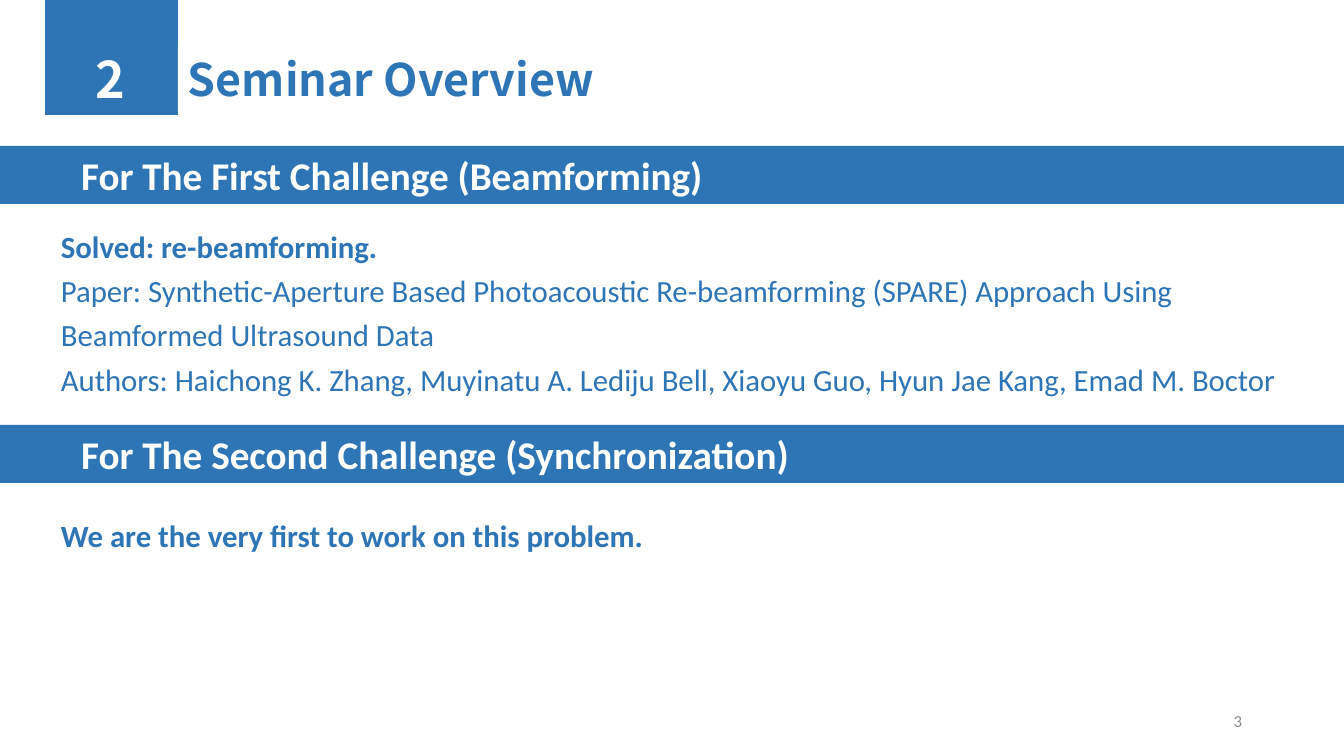
"""Build the Seminar Overview slide."""
from pptx import Presentation
from pptx.dml.color import RGBColor
from pptx.enum.shapes import MSO_SHAPE
from pptx.enum.text import MSO_ANCHOR, PP_ALIGN
from pptx.util import Pt

PX = 914400 / 100.8
WIDTH, HEIGHT = 1344, 756
COLORS = {"blue": "2E75B6", "white": "FFFFFF", "gray": "8C8C8C"}
HEADING_FONT, BODY_FONT = "Noto Sans CJK SC", "Calibri"

SECTION_NUMBER = "2"
TITLE = "Seminar Overview"
PAGE_NUMBER = "3"
SECTIONS = [
    {"bar_top": 146, "heading": "For The First Challenge (Beamforming)",
     "body_top": 215, "body_height": 189,
     "body": [("Solved: re-beamforming.", True),
              ("Paper: Synthetic-Aperture Based Photoacoustic Re-beamforming (SPARE) "
               "Approach Using Beamformed Ultrasound Data", False),
              ("Authors: Haichong K. Zhang, Muyinatu A. Lediju Bell, Xiaoyu Guo, "
               "Hyun Jae Kang, Emad M. Boctor", False)]},
    {"bar_top": 425, "heading": "For The Second Challenge (Synchronization)",
     "body_top": 504, "body_height": 55,
     "body": [("We are the very first to work on this problem.", True)]},
]
BAR_HEIGHT, BAR_INDENT = 58, 71
BODY_LEFT, BODY_WIDTH = 51, 1249


def px(n):
    return round(n * PX)


def rgb(name):
    return RGBColor.from_string(COLORS[name])


def add_box(slide, box, fill):
    s = slide.shapes.add_shape(MSO_SHAPE.RECTANGLE, *map(px, box))
    s.shadow.inherit = False
    s.fill.solid()
    s.fill.fore_color.rgb = rgb(fill)
    s.line.fill.background()
    return s


def write(s, lines, size, color, font=BODY_FONT, wrap=True, spacing=None,
          align=PP_ALIGN.LEFT, anchor=MSO_ANCHOR.TOP):
    tf = s.text_frame
    tf.word_wrap = wrap
    tf.vertical_anchor = anchor
    for i, (text, bold) in enumerate(lines):
        p = tf.add_paragraph() if i else tf.paragraphs[0]
        p.text = text
        p.alignment = align
        p.line_spacing = spacing
        p.font.name = font
        p.font.size = Pt(size)
        p.font.bold = bold
        p.font.color.rgb = rgb(color)
    return tf


def add_header(slide):
    add_box(slide, (45, 0, 133, 115), "blue")
    number = add_box(slide, (86, 43, 51, 72), "blue")
    write(number, [(SECTION_NUMBER, True)], 36, "white", HEADING_FONT, wrap=False)
    title = add_box(slide, (178, 47, 1139, 65), "white")
    write(title, [(TITLE, True)], 32, "blue", HEADING_FONT)


def add_section(slide, section):
    bar = add_box(slide, (0, section["bar_top"], WIDTH, BAR_HEIGHT), "blue")
    tf = write(bar, [(section["heading"], True)], 28, "white")
    tf.margin_left += px(BAR_INDENT)
    body = slide.shapes.add_textbox(
        *map(px, (BODY_LEFT, section["body_top"], BODY_WIDTH, section["body_height"])))
    write(body, section["body"], 22, "blue", spacing=1.2)


def main():
    prs = Presentation()
    prs.slide_width, prs.slide_height = px(WIDTH), px(HEIGHT)
    slide = prs.slides.add_slide(prs.slide_layouts[6])
    add_header(slide)
    for section in SECTIONS:
        add_section(slide, section)
    page = slide.shapes.add_textbox(*map(px, (950, 701, 302, 40)))
    write(page, [(PAGE_NUMBER, False)], 12, "gray",
          align=PP_ALIGN.RIGHT, anchor=MSO_ANCHOR.MIDDLE)
    prs.save("out.pptx")


if __name__ == "__main__":
    main()
